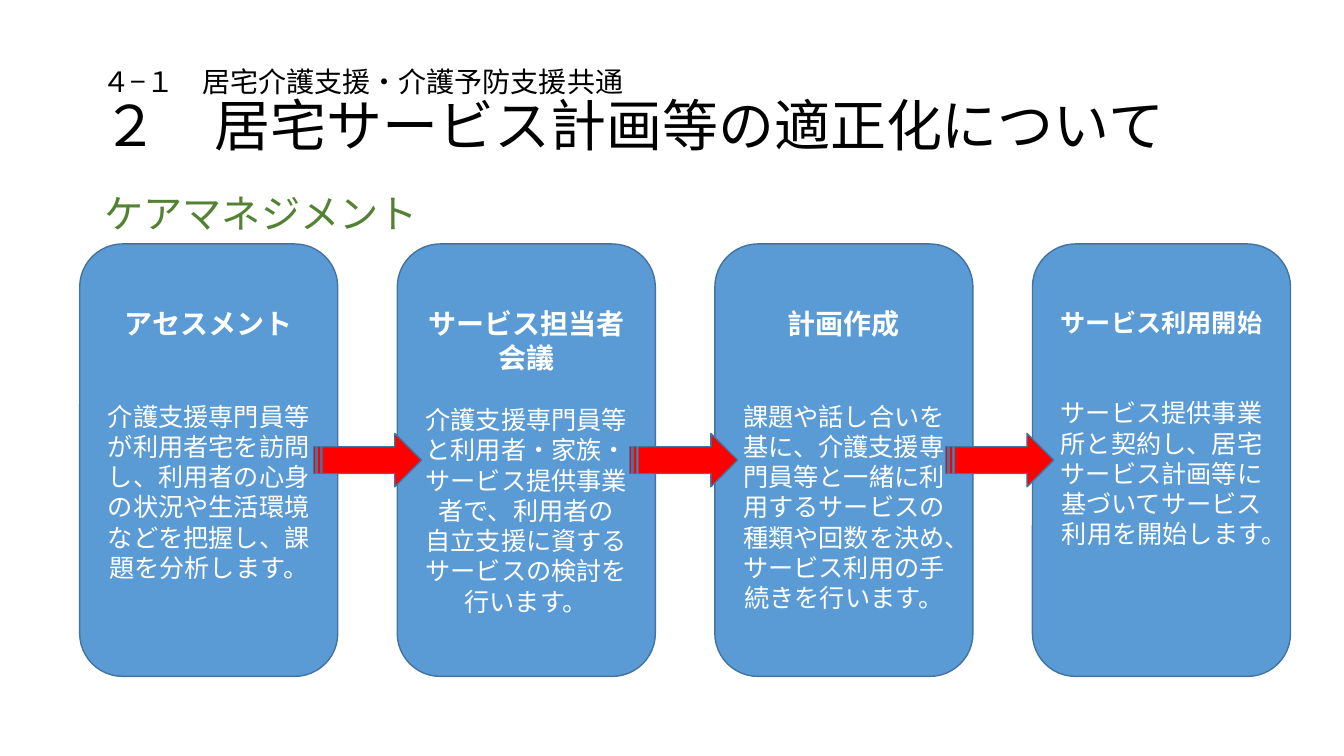
"""Build the care management process slide."""
from dataclasses import dataclass, replace

from pptx import Presentation
from pptx import util as u
from pptx.dml.color import RGBColor
from pptx.enum import shapes, text

WIDTH, HEIGHT = u.Inches(13.33), u.Inches(7.5)
FONT = "Calibri"
COLORS = {"black": "000000", "white": "FFFFFF", "green": "548235",
          "card": "5B9BD5", "outline": "43739E", "arrow": "FF0000"}


@dataclass(frozen=True)
class Frame:
    """Position and size in percent of the slide."""
    left: float
    top: float
    width: float
    height: float

    def shifted(self, index: int, pitch: float) -> "Frame":
        """Return the frame moved right by whole pitches."""
        return replace(self, left=self.left + index * pitch)

    def lengths(self) -> tuple[int, int, int, int]:
        """Return the frame in slide units."""
        return (int(WIDTH * self.left / 100), int(HEIGHT * self.top / 100),
                int(WIDTH * self.width / 100), int(HEIGHT * self.height / 100))


@dataclass(frozen=True)
class Step:
    """One stage of the process."""
    heading: str
    body: tuple[str, ...]
    heading_size: int = 20
    gap: float = 43.2


TITLE = Frame(6.9, 5.33, 86.27, 19.33)
SUBTITLE = Frame(6.9, 24.4, 25.06, 7.6)
CARD, CARD_PITCH = Frame(5.93, 32.27, 19.2, 57.2), 23.63
ARROW, ARROW_PITCH = Frame(23.33, 57.33, 8.03, 7.07), 23.52

STEPS = (
    Step("アセスメント",
         ("介護支援専門員等が利用者宅を訪問し、利用者の心身の状況や生活環境などを把握し、課題を分析します。",)),
    Step("サービス担当者会議",
         ("介護支援専門員等と利用者・家族・サービス提供事業者で、利用者の",
          "自立支援に資するサービスの検討を行います。"), gap=21.6),
    Step("計画作成",
         ("課題や話し合いを基に、介護支援専門員等と一緒に利用するサービスの種類や回数を決め、サービス利用の手続きを行います。",)),
    Step("サービス利用開始",
         ("サービス提供事業所と契約し、居宅サービス計画等に基づいてサービス利用を開始します。",),
         heading_size=18),
)


def color(name: str) -> RGBColor:
    """Look up a named colour."""
    return RGBColor.from_string(COLORS[name])


def style(span, size: float, shade: str, bold: bool = False) -> None:
    """Format one run."""
    span.font.name = FONT
    span.font.size = u.Pt(size)
    span.font.bold = bold
    span.font.color.rgb = color(shade)


def add_shape(page, kind, frame: Frame, fill: str):
    """Add a filled, outlined shape without a shadow."""
    shape = page.shapes.add_shape(kind, *frame.lengths())
    shape.shadow.inherit = False
    shape.fill.solid()
    shape.fill.fore_color.rgb = color(fill)
    shape.line.color.rgb = color("outline")
    shape.line.width = u.Pt(1)
    return shape


def add_title(page) -> None:
    """Add the two-line title."""
    box = page.shapes.add_textbox(*TITLE.lengths()).text_frame
    box.word_wrap = True
    box.vertical_anchor = text.MSO_ANCHOR.MIDDLE
    box.text = "４−１　居宅介護支援・介護予防支援共通\v２　居宅サービス計画等の適正化について"
    para = box.paragraphs[0]
    para.line_spacing = 0.9
    for span, size in zip(para.runs, (20, 40)):
        style(span, size, "black")


def add_subtitle(page) -> None:
    """Add the green heading above the cards."""
    box = page.shapes.add_textbox(*SUBTITLE.lengths()).text_frame
    box.word_wrap = False
    box.text = "ケアマネジメント"
    para = box.paragraphs[0]
    para.alignment = text.PP_ALIGN.CENTER
    style(para.runs[0], 28, "green")


def add_card(page, step: Step, frame: Frame) -> None:
    """Add a rounded card with a heading and body."""
    shape = add_shape(page, shapes.MSO_SHAPE.ROUNDED_RECTANGLE, frame, "card")
    box = shape.text_frame
    box.word_wrap = True
    box.vertical_anchor = text.MSO_ANCHOR.TOP
    box.margin_top = int(HEIGHT / 15)
    box.text = "\n".join((step.heading, *step.body))
    for index, para in enumerate(box.paragraphs):
        is_heading = index == 0
        para.alignment = text.PP_ALIGN.CENTER
        para.space_after = u.Pt(step.gap if is_heading else 0)
        style(para.runs[0], step.heading_size if is_heading else 18,
              "white", is_heading)


def main() -> None:
    """Create and save the deck."""
    deck = Presentation()
    deck.slide_width, deck.slide_height = WIDTH, HEIGHT
    page = deck.slides.add_slide(deck.slide_layouts[6])
    add_title(page)
    add_subtitle(page)
    for index, step in enumerate(STEPS):
        add_card(page, step, CARD.shifted(index, CARD_PITCH))
    for index in range(len(STEPS) - 1):
        add_shape(page, shapes.MSO_SHAPE.STRIPED_RIGHT_ARROW,
                  ARROW.shifted(index, ARROW_PITCH), "arrow")
    deck.save("out.pptx")


if __name__ == "__main__":
    main()
